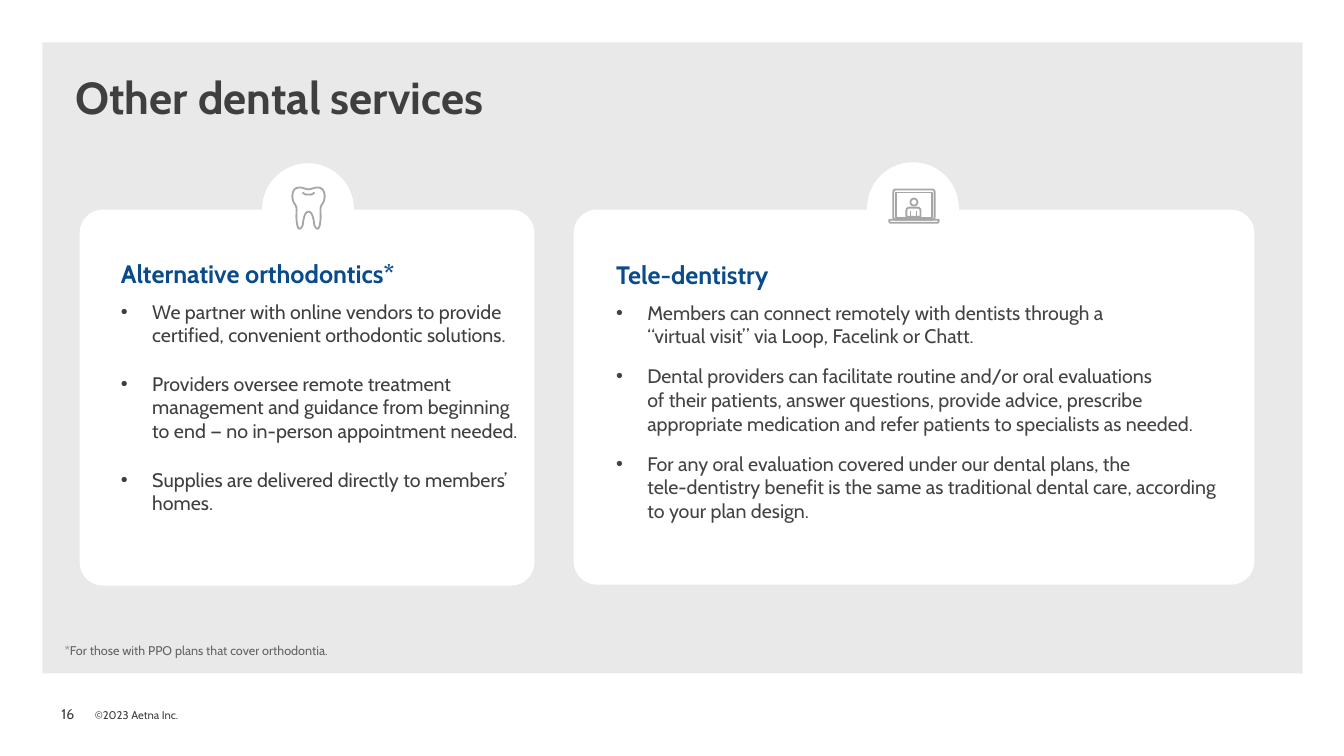
from dataclasses import dataclass
from lxml.etree import SubElement
from pptx import Presentation
from pptx.dml.color import RGBColor
from pptx.enum.shapes import MSO_CONNECTOR, MSO_SHAPE as Shape
from pptx.enum.text import MSO_ANCHOR as Anchor, MSO_AUTO_SIZE as AutoSize
from pptx.oxml.ns import qn
from pptx.util import Inches, Pt

TITLE = "Other dental services"
FOOTNOTE = "*For those with PPO plans that cover orthodontia."
PAGE = "16"
COPYRIGHT = "©2023 Aetna Inc."

# card and text boxes: left, top, width, height in inches
CARDS = [
    dict(
        heading="Alternative orthodontics*",
        bullets=[
            "We partner with online vendors to provide certified, convenient orthodontic solutions.",
            "Providers oversee remote treatment management and guidance from beginning "
            "to end — no in-person appointment needed.",
            "Supplies are delivered directly to members’ homes.",
        ],
        card=(0.79, 2.08, 4.51, 3.73), text=(1.2, 2.56, 3.95, 3.1),
        badge=(2.6, 1.62), gap=18, color="3F3F3F",
    ),
    dict(
        heading="Tele-dentistry",
        bullets=[
            "Members can connect remotely with dentists through a \v"
            "“virtual visit” via Loop, Facelink or Chatt.",
            "Dental providers can facilitate routine and/or oral evaluations \v"
            "of their patients, answer questions, provide advice, prescribe "
            "appropriate medication and refer patients to specialists as needed.",
            "For any oral evaluation covered under our dental plans, the \v"
            "tele-dentistry benefit is the same as traditional dental care, "
            "according to your plan design.",
        ],
        card=(5.69, 2.08, 6.75, 3.72), text=(6.11, 2.57, 6.14, 2.99),
        badge=(8.6, 1.61), gap=12, color="434343",
    ),
]
BADGE_SIZE = 0.91

# right half of the tooth, as offsets from the middle of its top edge
TOOTH_HALF = [
    (0, 0.03), (0.04, 0.02), (0.09, 0.01), (0.14, 0.03), (0.16, 0.09), (0.15, 0.15),
    (0.12, 0.21), (0.12, 0.31), (0.11, 0.39), (0.09, 0.42), (0.06, 0.39),
    (0.05, 0.33), (0.03, 0.27), (0, 0.25),
]
TOOTH_SMILE = [(-0.06, 0.06), (-0.03, 0.08), (0, 0.08), (0.03, 0.08), (0.06, 0.06)]
TOOTH_TOP = (3.06, 1.85)

LAPTOP_PARTS = [
    (Shape.ROUNDED_RECTANGLE, 8.86, 1.88, 0.41, 0.3, 0.08, 0),
    (Shape.RECTANGLE, 8.89, 1.91, 0.35, 0.25, None, 0),
    (Shape.ROUND_2_SAME_RECTANGLE, 8.82, 2.18, 0.49, 0.03, 0.5, 180),
    (Shape.OVAL, 9.03, 1.97, 0.07, 0.07, None, 0),
    (Shape.ROUND_2_SAME_RECTANGLE, 8.99, 2.06, 0.14, 0.09, 0.3, 0),
]
ARM_XS, ARM_YS = (9.03, 9.09), (2.09, 2.15)


@dataclass(frozen=True)
class Theme:
    font: str = "Cabin"
    panel: str = "E9E9E9"
    white: str = "FFFFFF"
    dark: str = "3F3F3F"
    heading: str = "0A4B8C"
    note: str = "646464"
    icon: str = "A6A6A6"
    title_pt: int = 32
    heading_pt: int = 18
    body_pt: int = 14
    page_pt: int = 10
    note_pt: int = 9
    copyright_pt: int = 8
    icon_line: float = 1.3


T = Theme()


def rgb(color):
    return RGBColor.from_string(color)


def inches(*values):
    return [Inches(v) for v in values]


def style(p, size, color, bold=False):
    for r in p.runs:
        f = r.font
        f.name, f.size, f.bold = T.font, Pt(size), bold
        f.color.rgb = rgb(color)


def prepare_frame(sp, anchor=Anchor.TOP):
    tf = sp.text_frame
    tf.margin_left = tf.margin_right = tf.margin_top = tf.margin_bottom = 0
    tf.word_wrap, tf.auto_size, tf.vertical_anchor = True, AutoSize.NONE, anchor
    return tf


def place(sp, box):
    """Move a placeholder to box and bring it to the front."""
    sp.left, sp.top, sp.width, sp.height = inches(*box)
    sp.element.getparent().append(sp.element)
    return prepare_frame(sp)


def add_label(s, box, text, size, color, anchor=Anchor.TOP):
    tf = prepare_frame(s.shapes.add_textbox(*inches(*box)), anchor)
    tf.text = text
    style(tf.paragraphs[0], size, color)


def add_filled(s, kind, box, color):
    sp = s.shapes.add_shape(kind, *inches(*box))
    sp.shadow.inherit = False
    sp.fill.solid()
    sp.fill.fore_color.rgb = rgb(color)
    sp.line.fill.background()
    return sp


def outline(sp):
    sp.shadow.inherit = False
    sp.fill.background()
    sp.line.color.rgb, sp.line.width = rgb(T.icon), Pt(T.icon_line)


def set_bullet(p, char=None):
    """Give the paragraph a hanging bullet, or none at all."""
    indent = Inches(0.31) if char else 0
    pPr = p._p.get_or_add_pPr()
    pPr.set("marL", str(indent))
    pPr.set("indent", str(-indent))
    if char:
        SubElement(pPr, qn("a:buFont"), typeface="Arial")
        SubElement(pPr, qn("a:buChar"), char=char)
    else:
        SubElement(pPr, qn("a:buNone"))


def fill_card_text(tf, card):
    tf.text = "\n".join([card["heading"], *card["bullets"]])
    for i, p in enumerate(tf.paragraphs):
        set_bullet(p, "•" if i else None)
        p.space_before, p.space_after = Pt(0), Pt(card["gap"] if i else 8)
        if i:
            style(p, T.body_pt, card["color"])
        else:
            style(p, T.heading_pt, T.heading, bold=True)


def smooth(points, steps=4):
    """Points along a Catmull-Rom curve through the given points."""
    padded = [points[0], *points, points[-1]]
    curve = []
    for a, b, c, d in zip(padded, padded[1:], padded[2:], padded[3:]):
        for t in (k / steps for k in range(steps)):
            curve.append(tuple(
                q + t * (r - p) / 2 + t**2 * (2 * p - 5 * q + 4 * r - u) / 2
                + t**3 * (3 * q - p - 3 * r + u) / 2
                for p, q, r, u in zip(a, b, c, d)))
    return curve + [points[-1]]


def add_tooth(s):
    left_half = [(-x, y) for x, y in reversed(TOOTH_HALF[:-1])]
    for points, closed in ((TOOTH_HALF + left_half, True), (TOOTH_SMILE, False)):
        pts = [inches(TOOTH_TOP[0] + x, TOOTH_TOP[1] + y) for x, y in smooth(points)]
        builder = s.shapes.build_freeform(*pts[0])
        builder.add_line_segments(pts[1:], close=closed)
        outline(builder.convert_to_shape())


def add_laptop(s):
    for kind, x, y, w, h, radius, turn in LAPTOP_PARTS:
        sp = s.shapes.add_shape(kind, *inches(x, y, w, h))
        outline(sp)
        sp.rotation = turn
        if radius is not None:
            sp.adjustments[0] = radius
    for x in ARM_XS:
        arm = s.shapes.add_connector(MSO_CONNECTOR.STRAIGHT, *inches(x, ARM_YS[0], x, ARM_YS[1]))
        arm.line.color.rgb, arm.line.width = rgb(T.icon), Pt(T.icon_line)
        SubElement(arm.element.spPr, qn("a:effectLst"))


def main():
    prs = Presentation()
    prs.slide_width, prs.slide_height = inches(13.33, 7.5)
    s = prs.slides.add_slide(prs.slide_layouts[3])
    title, *bodies = s.placeholders

    add_label(s, (0.61, 6.96, 0.39, 0.25), PAGE, T.page_pt, T.dark, Anchor.MIDDLE)
    add_label(s, (0.94, 7.03, 8.8, 0.13), COPYRIGHT, T.copyright_pt, T.dark, Anchor.BOTTOM)
    add_filled(s, Shape.RECTANGLE, (0.42, 0.42, 12.5, 6.26), T.panel)

    tf = place(title, (0.75, 0.75, 5.03, 0.56))
    tf.text = TITLE
    p = tf.paragraphs[0]
    set_bullet(p)
    p.alignment, p.line_spacing = 1, 0.9
    style(p, T.title_pt, T.dark, bold=True)

    for card, body, add_icon in zip(CARDS, bodies, (add_tooth, add_laptop)):
        add_filled(s, Shape.ROUNDED_RECTANGLE, card["card"], T.white).adjustments[0] = 0.062
        fill_card_text(place(body, card["text"]), card)
        add_filled(s, Shape.OVAL, (*card["badge"], BADGE_SIZE, BADGE_SIZE), T.white)
        add_icon(s)

    add_label(s, (0.64, 6.38, 7.51, 0.15), FOOTNOTE, T.note_pt, T.note)
    prs.save("out.pptx")


if __name__ == "__main__":
    main()
